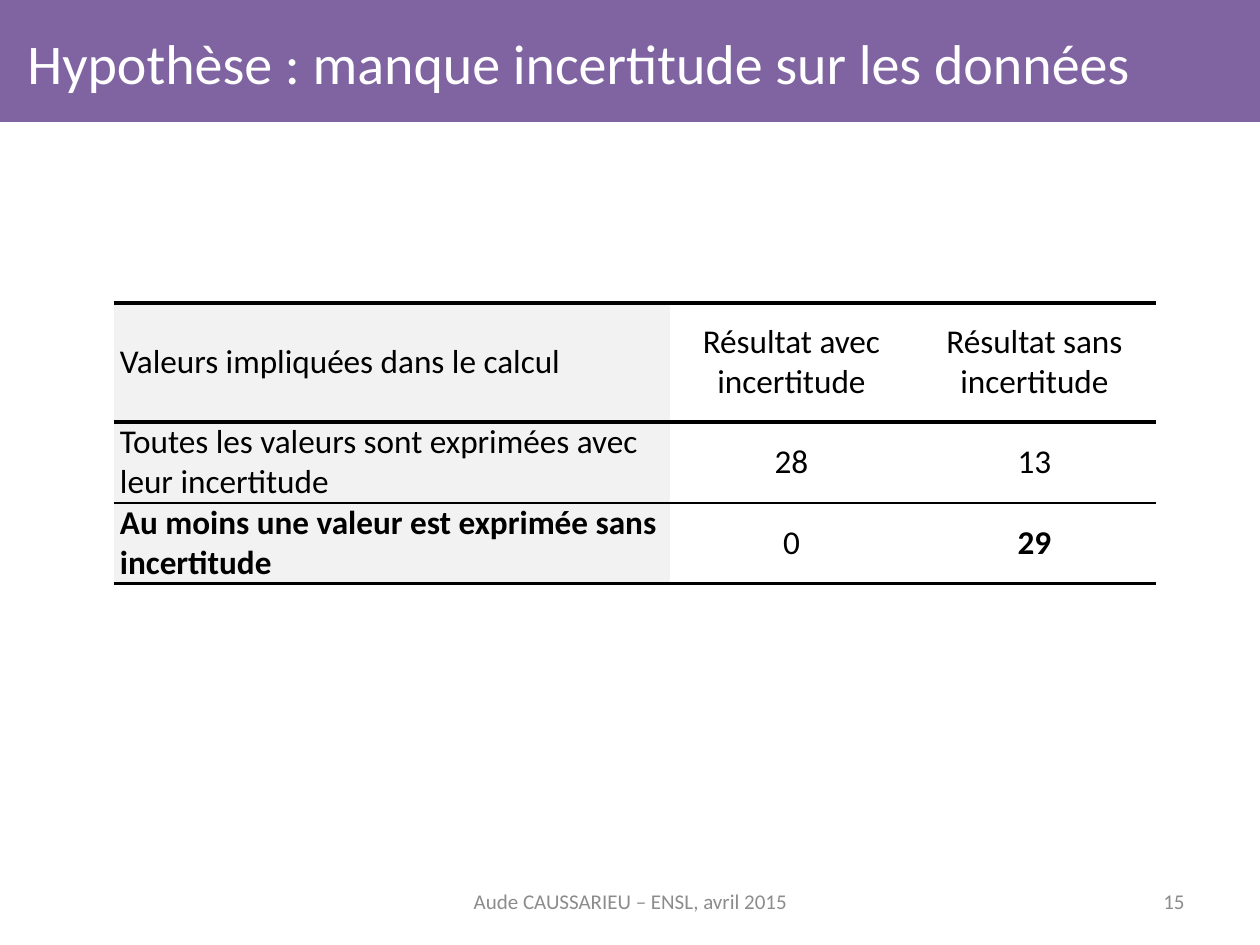
from dataclasses import dataclass

from lxml.etree import SubElement
from pptx import Presentation
from pptx.dml.color import RGBColor
from pptx.enum.shapes import MSO_SHAPE
from pptx.enum.text import MSO_ANCHOR, PP_ALIGN
from pptx.oxml.ns import qn
from pptx.util import Emu, Pt

PX_PER_INCH = 126


@dataclass(frozen=True)
class Theme:
    font: str = "Calibri"
    band: str = "8064A2"
    title: str = "FFFFFF"
    text: str = "000000"
    muted: str = "8C8C8C"
    label_fill: str = "F2F2F2"
    value_fill: str = "FFFFFF"
    title_size: int = 32
    table_size: int = 19
    footer_size: int = 12


THEME = Theme()

COLUMN_WIDTHS = (556, 243, 243)
ROW_HEIGHTS = (119, 81, 81)
RULES = (2, 2.25, 1, 2)  # line widths above, between and below the rows
ROWS = (
    ("Valeurs impliquées dans le calcul", "Résultat avec incertitude", "Résultat sans incertitude"),
    ("Toutes les valeurs sont exprimées avec leur incertitude", "28", "13"),
    ("Au moins une valeur est exprimée sans incertitude", "0", "29"),
)
BOLD_CELLS = {(2, 0), (2, 2)}


def px(n):
    return Emu(round(n * 914400 / PX_PER_INCH))


def set_text(tf, text, size, color, align=PP_ALIGN.LEFT, bold=False):
    tf.text = text
    tf.word_wrap = True
    p = tf.paragraphs[0]
    p.alignment = align
    font = p.runs[0].font
    font.name, font.size, font.bold = THEME.font, Pt(size), bold
    font.color.rgb = RGBColor.from_string(color)


def add_band(slide, x, y, w, h):
    sp = slide.shapes.add_shape(MSO_SHAPE.RECTANGLE, px(x), px(y), px(w), px(h))
    sp.shadow.inherit = False
    sp.fill.solid()
    sp.fill.fore_color.rgb = RGBColor.from_string(THEME.band)
    sp.line.fill.background()


def add_text(slide, x, y, w, h, text, size, color, align=PP_ALIGN.LEFT):
    tf = slide.shapes.add_textbox(px(x), px(y), px(w), px(h)).text_frame
    set_text(tf, text, size, color, align)
    tf.vertical_anchor = MSO_ANCHOR.MIDDLE


def set_borders(cell, top, bottom):
    """Rule the cell above and below, leaving its sides open."""
    tc_pr = cell._tc.get_or_add_tcPr()
    sides = (("a:lnL", None), ("a:lnR", None), ("a:lnT", top), ("a:lnB", bottom))
    for i, (tag, width) in enumerate(sides):
        ln = SubElement(tc_pr, qn(tag))
        tc_pr.insert(i, ln)  # borders come before the fill
        if width is None:
            SubElement(ln, qn("a:noFill"))
        else:
            ln.set("w", str(Pt(width)))
            fill = SubElement(ln, qn("a:solidFill"))
            SubElement(fill, qn("a:srgbClr")).set("val", THEME.text)


def format_cell(cell, text, is_label, bold):
    align = PP_ALIGN.LEFT if is_label else PP_ALIGN.CENTER
    set_text(cell.text_frame, text, THEME.table_size, THEME.text, align, bold)
    cell.vertical_anchor = MSO_ANCHOR.MIDDLE
    cell.margin_left = cell.margin_right = px(6)
    cell.margin_top = cell.margin_bottom = 0
    cell.fill.solid()
    color = THEME.label_fill if is_label else THEME.value_fill
    cell.fill.fore_color.rgb = RGBColor.from_string(color)


def add_results_table(slide, x, y):
    table = slide.shapes.add_table(
        len(ROWS), len(COLUMN_WIDTHS), px(x), px(y), px(sum(COLUMN_WIDTHS)), px(sum(ROW_HEIGHTS))
    ).table
    table.first_row = table.horz_banding = False
    for column, width in zip(table.columns, COLUMN_WIDTHS):
        column.width = px(width)
    for row, height in zip(table.rows, ROW_HEIGHTS):
        row.height = px(height)
    for r, texts in enumerate(ROWS):
        for c, text in enumerate(texts):
            cell = table.cell(r, c)
            format_cell(cell, text, c == 0, (r, c) in BOLD_CELLS)
            set_borders(cell, RULES[r], RULES[r + 1])


def main():
    prs = Presentation()
    prs.slide_width, prs.slide_height = px(1260), px(945)
    slide = prs.slides.add_slide(prs.slide_layouts[6])
    add_band(slide, -10, -43, 1275, 165)
    add_text(slide, 15, 0, 1230, 125, "Hypothèse : manque incertitude sur les données",
             THEME.title_size, THEME.title)
    add_results_table(slide, 114, 303)
    add_text(slide, 431, 876, 399, 50, "Aude CAUSSARIEU – ENSL, avril 2015",
             THEME.footer_size, THEME.muted, PP_ALIGN.CENTER)
    add_text(slide, 903, 876, 294, 50, "15", THEME.footer_size, THEME.muted, PP_ALIGN.RIGHT)
    prs.save("out.pptx")


if __name__ == "__main__":
    main()
